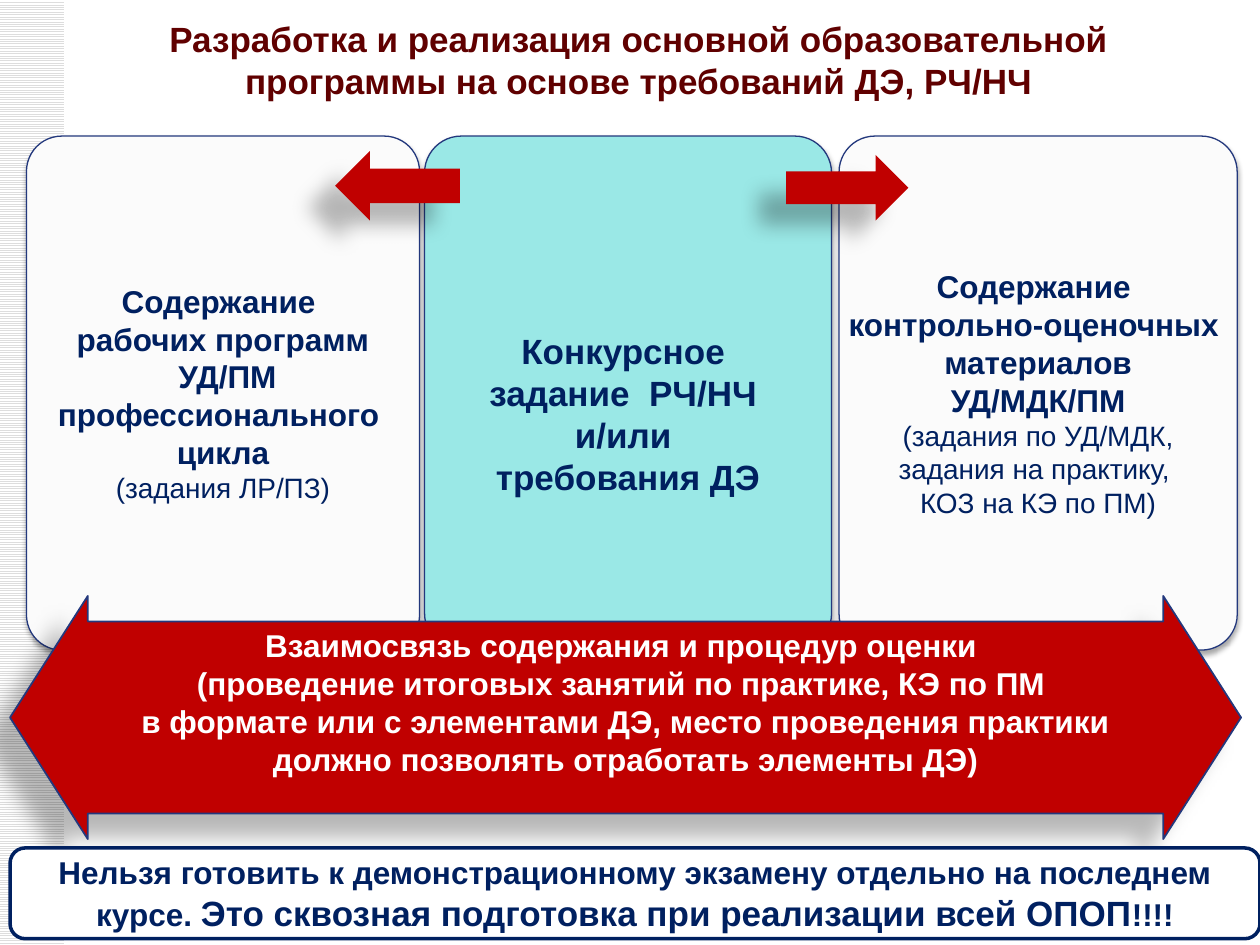
from lxml import etree
from pptx import Presentation
from pptx.dml.color import RGBColor
from pptx.enum.dml import MSO_PATTERN
from pptx.enum.shapes import MSO_SHAPE
from pptx.enum.text import MSO_ANCHOR, PP_ALIGN
from pptx.oxml.ns import qn
from pptx.util import Inches, Pt

RECT, ROUND = MSO_SHAPE.RECTANGLE, MSO_SHAPE.ROUNDED_RECTANGLE
LEFT, RIGHT = MSO_SHAPE.LEFT_ARROW, MSO_SHAPE.RIGHT_ARROW
BOTH = MSO_SHAPE.LEFT_RIGHT_ARROW
TOP, MIDDLE = MSO_ANCHOR.TOP, MSO_ANCHOR.MIDDLE
CENTER = PP_ALIGN.CENTER
STRIPES = MSO_PATTERN.LIGHT_HORIZONTAL

WHITE = RGBColor(0xFF, 0xFF, 0xFF)
GREY = RGBColor(0xDD, 0xDD, 0xDD)
PALE = RGBColor(0xFB, 0xFB, 0xFB)
AQUA = RGBColor(0x9A, 0xE8, 0xE6)
RED = RGBColor(0xC0, 0x00, 0x00)
MAROON = RGBColor(0x60, 0x00, 0x00)
NAVY = RGBColor(0x00, 0x20, 0x60)
BLUE = RGBColor(0x23, 0x38, 0x7D)

# Shadows: opacity %, blur pt, distance pt, direction in degrees
SOFT = (35, 3.1, 1.8, 90)
DEEP = (28, 11.8, 19.7, 141)


class SlideBuilder:
    font = "Arial"

    def __init__(self, slide):
        self.slide = slide

    def shape(self, kind, box, fill, line=None, adj=(), shadow=None):
        sp = self.slide.shapes.add_shape(kind, *map(Inches, box))
        for i, value in enumerate(adj):
            sp.adjustments[i] = value
        sp.fill.solid()
        sp.fill.fore_color.rgb = fill
        if line:
            sp.line.color.rgb, sp.line.width = line[0], Pt(line[1])
        else:
            sp.line.fill.background()
        sp.shadow.inherit = False
        if shadow:
            self.shadow(sp, *shadow)
        return sp

    def shadow(self, sp, opacity, blur, dist, angle):
        effects = sp._element.spPr.find(qn("a:effectLst"))
        outer = etree.SubElement(effects, qn("a:outerShdw"), blurRad=str(Pt(blur)),
                                 dist=str(Pt(dist)), dir=str(angle * 60000),
                                 algn="ctr", rotWithShape="0")
        color = etree.SubElement(outer, qn("a:srgbClr"), val="000000")
        etree.SubElement(color, qn("a:alpha"), val=str(opacity * 1000))

    def stripes(self, box):
        sp = self.shape(RECT, box, WHITE)
        sp.fill.patterned()
        sp.fill.pattern = STRIPES
        sp.fill.fore_color.rgb, sp.fill.back_color.rgb = GREY, WHITE

    def textbox(self, box):
        return self.slide.shapes.add_textbox(*map(Inches, box))

    def text(self, sp, paragraphs, color, **frame):
        """Each paragraph is a list of runs (text, size, bold)."""
        tf = sp.text_frame
        for name, value in {"word_wrap": True, "vertical_anchor": MIDDLE, **frame}.items():
            setattr(tf, name, value)
        for i, runs in enumerate(paragraphs):
            p = tf.paragraphs[0] if i == 0 else tf.add_paragraph()
            p.alignment = CENTER
            for words, size, bold in runs:
                r = p.add_run()
                r.text = words
                r.font.color.rgb = color
                style = {"name": self.font, "size": Pt(size), "bold": bold}
                for name, value in style.items():
                    setattr(r.font, name, value)


def lines(size, bold, *texts):
    return [[(words, size, bold)] for words in texts]


def main():
    prs = Presentation()
    prs.slide_width, prs.slide_height = Inches(10), Inches(7.5)
    s = SlideBuilder(prs.slides.add_slide(prs.slide_layouts[6]))

    # Striped margin
    s.stripes((0, 0, 0.51, 7.5))

    # Three panels: left, width, fill, text, top inset
    panels = [
        (0.21, 3.12, PALE,
         lines(18, True, "Содержание ", "рабочих программ", " УД/ПМ",
               "профессионального ", "цикла")
         + lines(16, False, "(задания ЛР/ПЗ)"), 0.05),
        (3.37, 3.23, AQUA,
         lines(20, True, "Конкурсное ", "задание  РЧ/НЧ ", "и/или ",
               "требования ДЭ"), 0.37),
        (6.66, 3.16, PALE,
         lines(18, True, "Содержание ", "контрольно-оценочных ", "материалов",
               "УД/МДК/ПМ")
         + lines(16, False, "(задания по УД/МДК,", "задания на практику, ",
                 "КОЗ на КЭ по ПМ)"), 0.05),
    ]
    for left, width, fill, content, inset in panels:
        sp = s.shape(ROUND, (left, 1.08, width, 4.08), fill, (BLUE, 0.75), [0.09], SOFT)
        s.text(sp, content, NAVY, word_wrap=False, margin_top=Inches(inset))

    # Title
    title = s.textbox((0.58, 0.13, 8.98, 0.69))
    s.text(title, lines(20, True, "Разработка и реализация основной образовательной "
                        "программы на основе требований ДЭ, РЧ/НЧ"), MAROON)

    # Arrows from the middle panel to its neighbours
    s.shape(RIGHT, (6.24, 1.23, 0.97, 0.52), RED, shadow=DEEP)
    s.shape(LEFT, (2.66, 1.2, 0.99, 0.55), RED, shadow=DEEP)

    # Wide double arrow
    link = s.shape(BOTH, (0.08, 4.73, 9.77, 1.93), RED, (BLUE, 1), [0.79, 0.32], DEEP)
    s.text(link, lines(18, True, "Взаимосвязь содержания и процедур оценки ",
                       "(проведение итоговых занятий по практике, КЭ по ПМ ",
                       "в формате или с элементами ДЭ, место проведения практики "
                       "должно позволять отработать элементы ДЭ)"),
           WHITE, vertical_anchor=TOP, margin_top=Inches(0.04), margin_bottom=Inches(0.04))

    # Conclusion
    note = s.shape(ROUND, (0.08, 6.73, 9.92, 0.72), WHITE, (NAVY, 2))
    s.text(note, [[("Нельзя готовить к демонстрационному экзамену отдельно "
                    "на последнем курсе. ", 18, True),
                   ("Это сквозная подготовка при реализации всей ОПОП", 20, True),
                   ("!!!!", 18, True)]], NAVY)

    prs.save("out.pptx")


if __name__ == "__main__":
    main()
